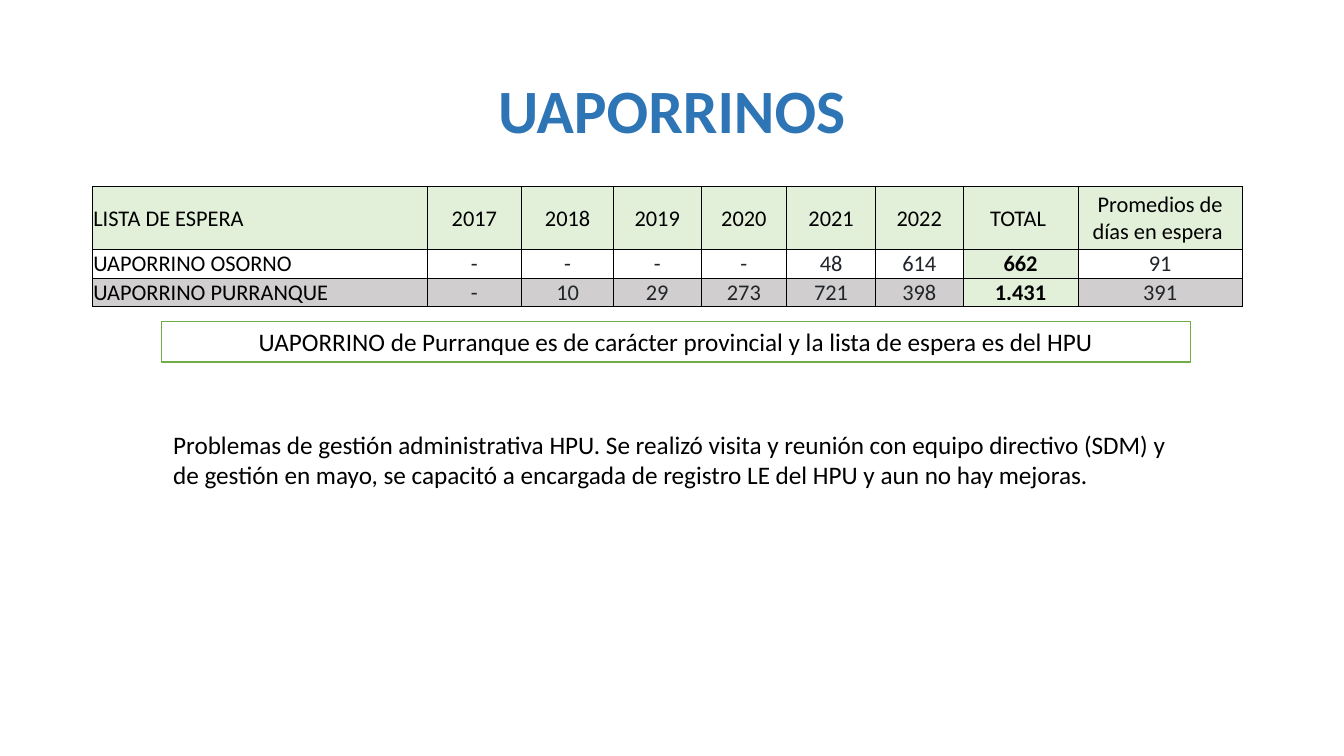
from lxml.etree import SubElement
from pptx import Presentation
from pptx.dml.color import RGBColor
from pptx.enum.shapes import MSO_SHAPE
from pptx.enum.text import MSO_ANCHOR, PP_ALIGN
from pptx.oxml.ns import qn
from pptx.util import Pt

FONT = "Calibri"
COLORS = {
    "title": "2E75B6",
    "text": "000000",
    "value": "212529",
    "border": "000000",
    "green": "E2F0D9",
    "gray": "D0CECE",
    "white": "FFFFFF",
    "note_line": "70AD47",
}
WAITING_LIST = [
    ["LISTA DE ESPERA", "2017", "2018", "2019", "2020", "2021", "2022",
     "TOTAL ", "Promedios de días en espera "],
    ["UAPORRINO OSORNO", "-", "-", "-", "-", "48", "614", "662", "91"],
    ["UAPORRINO PURRANQUE", "-", "10", "29", "273", "721", "398", "1.431", "391"],
]
ROW_FILLS = ["green", "white", "gray"]
COLUMN_WIDTHS = [239, 67.7, 65.5, 62.6, 61.2, 63.4, 62.6, 82.1, 117.4]
ROW_HEIGHTS = [45, 20.3, 20.3]
TOTAL_COLUMN = 7


def color(name):
    return RGBColor.from_string(COLORS[name])


def write(text_frame, text, size, color_name="text", align=PP_ALIGN.LEFT, bold=False):
    text_frame.word_wrap = True
    text_frame.text = text
    paragraph = text_frame.paragraphs[0]
    paragraph.alignment = align
    font = paragraph.runs[0].font
    font.name = FONT
    font.size = Pt(size)
    font.bold = bold
    font.color.rgb = color(color_name)


def add_text(slide, left, top, width, height, text, size, **style):
    box = slide.shapes.add_textbox(Pt(left), Pt(top), Pt(width), Pt(height))
    write(box.text_frame, text, size, **style)
    return box


def add_note(slide, left, top, width, height, text):
    """Add a white, green-edged rectangle with centred text."""
    note = slide.shapes.add_shape(
        MSO_SHAPE.RECTANGLE, Pt(left), Pt(top), Pt(width), Pt(height))
    note.shadow.inherit = False
    note.fill.solid()
    note.fill.fore_color.rgb = color("white")
    note.line.color.rgb = color("note_line")
    note.line.width = Pt(1)
    note.text_frame.vertical_anchor = MSO_ANCHOR.TOP
    write(note.text_frame, text, 18, align=PP_ALIGN.CENTER)


def add_borders(cell):
    properties = cell._tc.get_or_add_tcPr()
    for position, side in enumerate(("lnL", "lnR", "lnT", "lnB")):
        line = SubElement(properties, qn(f"a:{side}"), w=str(Pt(0.5)))
        fill = SubElement(line, qn("a:solidFill"))
        SubElement(fill, qn("a:srgbClr"), val=COLORS["border"])
        properties.insert(position, line)


def format_cell(cell, text, row, column):
    is_header, is_label, is_total = row == 0, column == 0, column == TOTAL_COLUMN
    is_value = not (is_header or is_label or is_total)
    cell.margin_left = cell.margin_right = cell.margin_top = Pt(0.7)
    cell.margin_bottom = Pt(0)
    if is_header:
        cell.vertical_anchor = MSO_ANCHOR.MIDDLE
    else:
        cell.vertical_anchor = MSO_ANCHOR.TOP if is_value else MSO_ANCHOR.BOTTOM
    write(cell.text_frame, text, 16,
          color_name="value" if is_value else "text",
          align=PP_ALIGN.LEFT if is_label else PP_ALIGN.CENTER,
          bold=is_total and not is_header)
    cell.fill.solid()
    cell.fill.fore_color.rgb = color("green" if is_total else ROW_FILLS[row])
    add_borders(cell)


def add_waiting_list(slide, left, top):
    table = slide.shapes.add_table(
        len(ROW_HEIGHTS), len(COLUMN_WIDTHS), Pt(left), Pt(top),
        Pt(sum(COLUMN_WIDTHS)), Pt(sum(ROW_HEIGHTS))).table
    table.first_row = table.horz_banding = False
    for column, width in zip(table.columns, COLUMN_WIDTHS):
        column.width = Pt(width)
    for row, (texts, height) in enumerate(zip(WAITING_LIST, ROW_HEIGHTS)):
        table.rows[row].height = Pt(height)
        for column, text in enumerate(texts):
            format_cell(table.cell(row, column), text, row, column)


def main():
    presentation = Presentation()
    presentation.slide_width = Pt(960)
    presentation.slide_height = Pt(540)
    slide = presentation.slides.add_slide(presentation.slide_layouts[6])

    title = add_text(slide, 66, 28.75, 828, 104.4, "UAPORRINOS", 44,
                     color_name="title", align=PP_ALIGN.CENTER, bold=True)
    title.text_frame.vertical_anchor = MSO_ANCHOR.MIDDLE
    title.text_frame.paragraphs[0].line_spacing = 0.9

    add_waiting_list(slide, 66, 133.2)
    add_note(slide, 115.2, 229.5, 735, 29.1,
             "UAPORRINO de Purranque es de carácter provincial "
             "y la lista de espera es del HPU")
    add_text(slide, 116.6, 303, 733.7, 50.9,
             "Problemas de gestión administrativa HPU. Se realizó visita y reunión "
             "con equipo directivo (SDM) y de gestión en mayo, se capacitó a encargada "
             "de registro LE del HPU y aun no hay mejoras.", 18)
    presentation.save("out.pptx")


if __name__ == "__main__":
    main()
